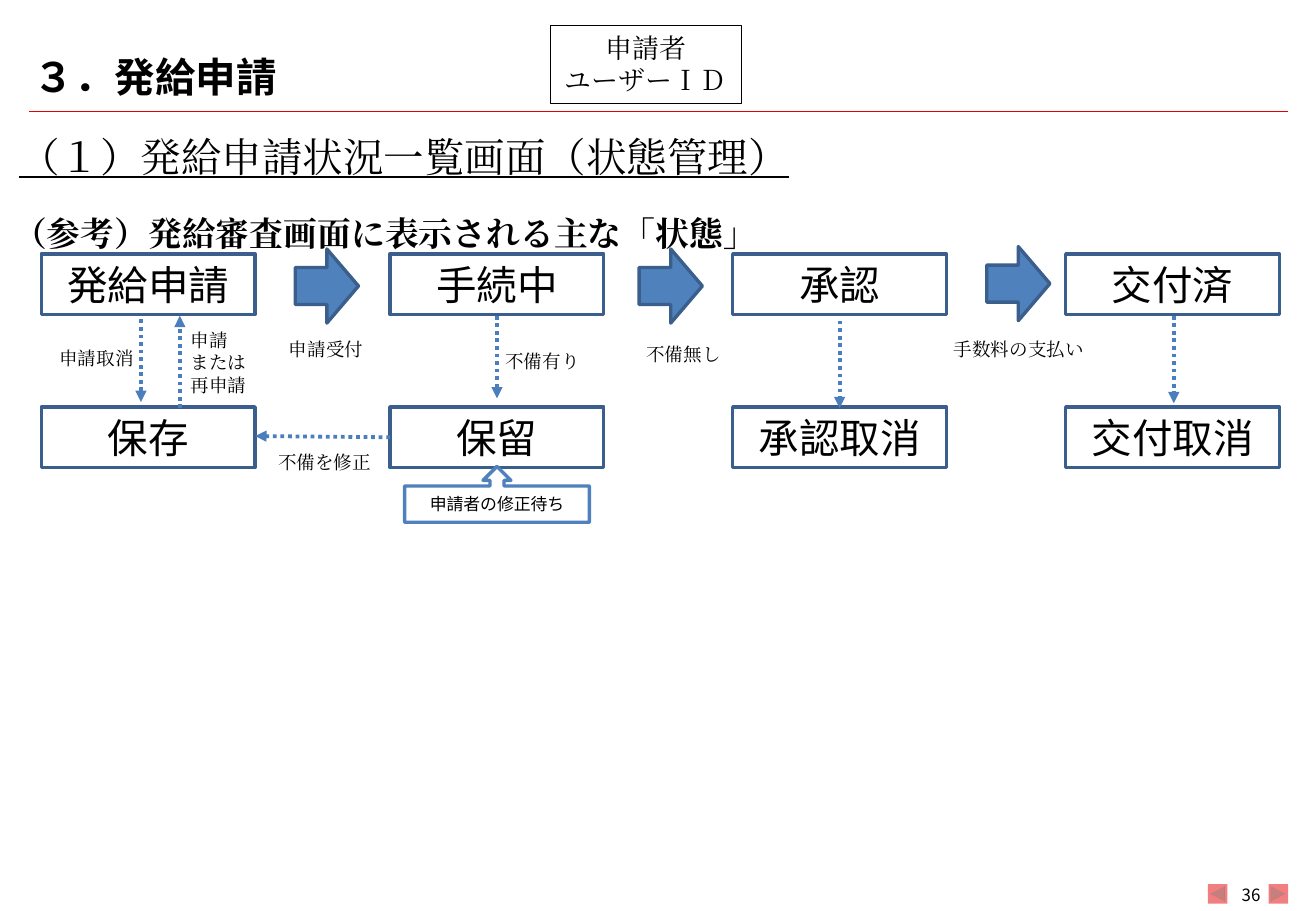
from dataclasses import dataclass

from lxml import etree
from pptx import Presentation
from pptx.dml.color import RGBColor
from pptx.enum.shapes import MSO_CONNECTOR, MSO_SHAPE
from pptx.enum.text import MSO_ANCHOR, PP_ALIGN
from pptx.oxml.ns import qn
from pptx.util import Pt

RECT = MSO_SHAPE.RECTANGLE
ARROW = MSO_SHAPE.RIGHT_ARROW
CALLOUT = MSO_SHAPE.UP_ARROW_CALLOUT
BACK = MSO_SHAPE.ACTION_BUTTON_BACK_OR_PREVIOUS
FORWARD = MSO_SHAPE.ACTION_BUTTON_FORWARD_OR_NEXT
STRAIGHT = MSO_CONNECTOR.STRAIGHT
TOP, MIDDLE = MSO_ANCHOR.TOP, MSO_ANCHOR.MIDDLE
LEFT, CENTER = PP_ALIGN.LEFT, PP_ALIGN.CENTER

PX = 9144  # 100 px to the inch


@dataclass(frozen=True)
class Theme:
    sans: str = "Noto Sans CJK JP"
    serif: str = "Cambria"
    black: str = "000000"
    white: str = "FFFFFF"
    red: str = "E60000"
    blue: str = "4F81BD"
    border: str = "3A5F8C"
    flow: str = "4B7EBC"
    heading: int = 24
    subheading: int = 20
    user: int = 16
    label: int = 11
    small: int = 10


T = Theme()

# Left edge of each column, with its upper and lower state
STATE_W, STATE_H = 176, 50
UPPER_Y, LOWER_Y = 209, 335
COLUMNS = [
    (34, "発給申請", "保存"),
    (321, "手続中", "保留"),
    (603, "承認", "承認取消"),
    (877, "交付済", "交付取消"),
]
BLOCK_ARROWS = [(243, 205), (526, 205), (812, 203)]
# Start and end of each dotted arrow
FLOWS = [
    (116, 263, 116, 331),
    (148, 336, 148, 260),
    (409, 260, 409, 328),
    (691, 264, 691, 336),
    (966, 260, 966, 332),
    (321, 360, 210, 359),
]
LABELS = [
    (39, 281, 101, 29, "申請取消"),
    (147, 266, 102, 66, "申請\nまたは\n再申請"),
    (228, 273, 96, 29, "申請受付"),
    (406, 283, 96, 28, "不備有り"),
    (522, 277, 96, 29, "不備無し"),
    (775, 273, 129, 29, "手数料の支払い"),
    (219, 366, 119, 29, "不備を修正"),
]


def rgb(color):
    return RGBColor.from_string(color)


def add_text(sp, text, *, size, font=T.serif, bold=False, underline=False,
             align=LEFT, anchor=TOP, side=10):
    tf = sp.text_frame
    tf.word_wrap = True
    tf.vertical_anchor = anchor
    tf.margin_left = tf.margin_right = side * PX
    for i, line in enumerate(text.split("\n")):
        p = tf.add_paragraph() if i else tf.paragraphs[0]
        p.alignment = align
        r = p.add_run()
        r.text = line
        r.font.size = Pt(size)
        r.font.name = font
        r.font.bold = bold
        r.font.underline = underline
        r.font.color.rgb = rgb(T.black)
        # East Asian typeface for the Japanese characters
        etree.SubElement(r.font._element, qn("a:ea"), typeface=font)


def add_box(s, x, y, w, h, text, **fmt):
    sp = s.shapes.add_textbox(x * PX, y * PX, w * PX, h * PX)
    add_text(sp, text, **fmt)


def add_shape(s, kind, x, y, w, h, *, fill=None, alpha=None, line=None, width=2):
    sp = s.shapes.add_shape(kind, x * PX, y * PX, w * PX, h * PX)
    sp.shadow.inherit = False
    if fill:
        sp.fill.solid()
        sp.fill.fore_color.rgb = rgb(fill)
    else:
        sp.fill.background()
    if alpha:
        color = sp._element.spPr.find(".//" + qn("a:srgbClr"))
        etree.SubElement(color, qn("a:alpha"), val=str(alpha * 1000))
    if line:
        sp.line.color.rgb = rgb(line)
        sp.line.width = Pt(width)
    else:
        sp.line.fill.background()
    return sp


def add_line(s, x1, y1, x2, y2, *, color, width, arrow=False):
    cxn = s.shapes.add_connector(STRAIGHT, x1 * PX, y1 * PX, x2 * PX, y2 * PX)
    cxn.line.color.rgb = rgb(color)
    cxn.line.width = Pt(width)
    spPr = cxn._element.spPr
    if arrow:
        ln = spPr.find(qn("a:ln"))
        etree.SubElement(ln, qn("a:prstDash"), val="sysDot")
        etree.SubElement(ln, qn("a:tailEnd"), type="triangle")
    etree.SubElement(spPr, qn("a:effectLst"))


def add_state(s, x, y, name):
    sp = add_shape(s, RECT, x, y, STATE_W, STATE_H, line=T.border)
    add_text(sp, name, size=T.heading, font=T.sans, align=CENTER, anchor=MIDDLE)


def main():
    prs = Presentation()
    prs.slide_width, prs.slide_height = 1083 * PX, 750 * PX
    s = prs.slides.add_slide(prs.slide_layouts[6])

    # Page frame
    for kind, x in ((BACK, 994), (FORWARD, 1044)):
        add_shape(s, kind, x, 728, 16, 16, fill=T.red, alpha=50)
    add_line(s, 24, 92, 1060, 92, color=T.red, width=0.25)
    add_box(s, 1014, 729, 31, 16, "36", size=T.small, font=T.sans,
            align=CENTER, anchor=MIDDLE, side=0)

    # Title and user
    add_box(s, 18, 33, 264, 59, "３．発給申請", size=T.heading, font=T.sans,
            bold=True, anchor=MIDDLE)
    user = add_shape(s, RECT, 453, 21, 157, 64, line=T.black, width=0.75)
    add_text(user, "申請者\nユーザーＩＤ", size=T.user, align=CENTER)
    add_box(s, 6, 104, 945, 51, "（１）発給申請状況一覧画面（状態管理）",
            size=T.heading, underline=True)

    # States and the main flow
    for x, upper, lower in COLUMNS:
        add_state(s, x, UPPER_Y, upper)
        add_state(s, x, LOWER_Y, lower)
    for x, y in BLOCK_ARROWS:
        add_shape(s, ARROW, x, y, 52, 61, fill=T.blue, line=T.border)
    add_box(s, 1, 170, 722, 44, "（参考）発給審査画面に表示される主な「状態」",
            size=T.subheading, bold=True)

    # Dotted flows and their labels
    for flow in FLOWS:
        add_line(s, *flow, color=T.flow, width=2.25, arrow=True)
    for label in LABELS:
        add_box(s, *label, size=T.label)

    # Callout under the pending state
    note = add_shape(s, CALLOUT, 333, 384, 152, 46, fill=T.white, line=T.blue)
    add_text(note, "申請者の修正待ち", size=T.small, font=T.sans,
             align=CENTER, anchor=MIDDLE)

    prs.save("out.pptx")


if __name__ == "__main__":
    main()
